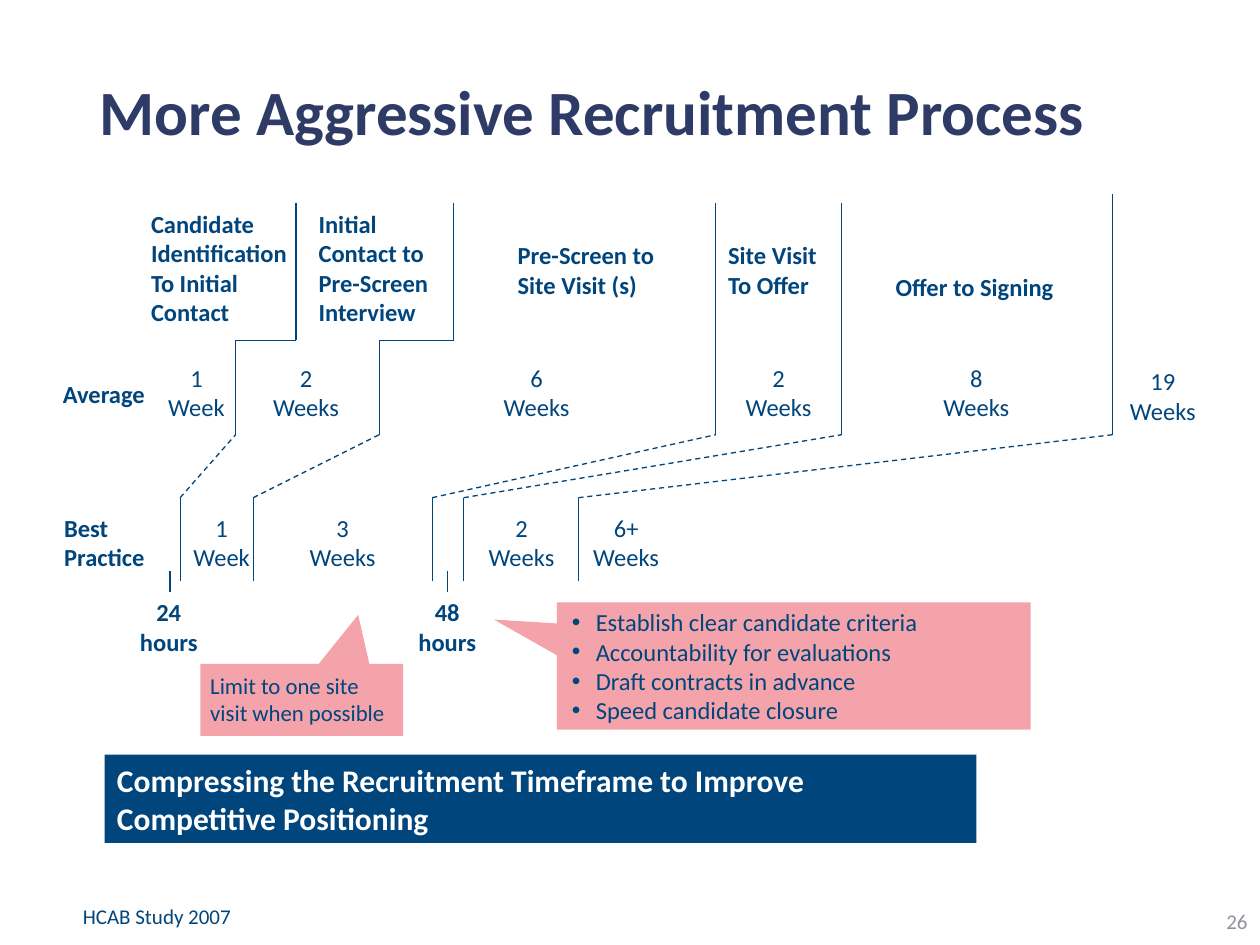
from dataclasses import dataclass

from lxml.etree import SubElement
from pptx import Presentation
from pptx.dml.color import RGBColor as RGB
from pptx.enum.dml import MSO_LINE
from pptx.enum.shapes import MSO_CONNECTOR, MSO_SHAPE
from pptx.enum.text import MSO_ANCHOR, MSO_AUTO_SIZE, PP_ALIGN
from pptx.oxml.ns import qn
from pptx.util import Inches, Pt


@dataclass(frozen=True)
class Theme:
    font: str = "Calibri"
    blue: RGB = RGB(0x00, 0x45, 0x7C)
    navy: RGB = RGB(0x2E, 0x3B, 0x66)
    pink: RGB = RGB(0xF3, 0xA3, 0xA9)
    gray: RGB = RGB(0x8F, 0x92, 0xA0)
    white: RGB = RGB(0xFF, 0xFF, 0xFF)
    title: int = 36
    banner: int = 18
    body: int = 14
    note: int = 13
    small: int = 12


theme = Theme()
prs = Presentation()
prs.slide_width, prs.slide_height = Inches(10), Inches(7.5)
s = prs.slides.add_slide(prs.slide_layouts[5])


def write(sp, lines, size=theme.body, color=theme.blue, bold=False,
          align=PP_ALIGN.LEFT, anchor=MSO_ANCHOR.TOP, wrap=True, bullet=False):
    """Fill a shape with one paragraph per line."""
    tf = sp.text_frame
    tf.word_wrap = wrap
    tf.auto_size = MSO_AUTO_SIZE.NONE
    tf.vertical_anchor = anchor
    for i, line in enumerate(lines):
        p = tf.add_paragraph() if i else tf.paragraphs[0]
        p.alignment = align
        if bullet:
            pPr = p._p.get_or_add_pPr()
            pPr.set("marL", str(Inches(0.19)))
            pPr.set("indent", str(Inches(-0.19)))
            SubElement(pPr, qn("a:buFont"), typeface="Arial")
            SubElement(pPr, qn("a:buChar"), char="•")
        r = p.add_run()
        r.text = line
        r.font.name, r.font.size, r.font.bold = theme.font, Pt(size), bold
        r.font.color.rgb = color


def add_box(x, y, w, h, shape=None, fill=None):
    """Add a text box, or a filled borderless shape if one is named."""
    place = [Inches(v) for v in (x, y, w, h)]
    if shape is None:
        return s.shapes.add_textbox(*place)
    sp = s.shapes.add_shape(shape, *place)
    sp.shadow.inherit = False
    sp.fill.solid()
    sp.fill.fore_color.rgb = fill
    sp.line.fill.background()
    return sp


# Title
title = s.shapes.title
title.left, title.top = Inches(0.69), Inches(0.19)
title.width, title.height = Inches(8.62), Inches(1.45)
write(title, ["More Aggressive Recruitment Process"], theme.title, theme.navy,
      bold=True, anchor=MSO_ANCHOR.MIDDLE)
title.text_frame.paragraphs[0].line_spacing = 0.9

# Dividers: heading row, average row, best-practice row and the links between
top, step, avg_end, best_top, best_end = 1.61, 2.7, 3.45, 3.95, 4.61
solid, dashed = [], []
for head_x, avg_x, best_x in [(2.35, 1.87, 1.43), (3.6, 3.01, 2.01)]:
    solid += [(head_x, top, head_x, step), (head_x, step, avg_x, step),
              (avg_x, step, avg_x, avg_end)]
    dashed.append((best_x, best_top, avg_x, avg_end))
    solid.append((best_x, best_top, best_x, best_end))
for avg_x, best_x, start in [(5.68, 3.43, top), (6.68, 3.68, top), (8.83, 4.59, 1.54)]:
    solid += [(avg_x, start, avg_x, avg_end), (best_x, best_top, best_x, best_end)]
    dashed.append((best_x, best_top, avg_x, avg_end))
for tick_x in (1.35, 3.55):
    solid.append((tick_x, 4.53, tick_x, 4.7))

for lines, dash in ((solid, None), (dashed, MSO_LINE.DASH)):
    for ends in lines:
        line = s.shapes.add_connector(MSO_CONNECTOR.STRAIGHT, *[Inches(v) for v in ends])
        line.line.color.rgb = theme.blue
        line.line.width = Pt(0.75)
        if dash:
            line.line.dash_style = dash
        SubElement(line._element.spPr, qn("a:effectLst"))

# Phase headings and row labels
for x, y, w, h, lines in [
    (1.1, 1.61, 1.29, 1.04, ["Candidate", "Identification", "To Initial", "Contact"]),
    (2.43, 1.61, 1.08, 1.04, ["Initial", "Contact to", "Pre-Screen", "Interview"]),
    (4.01, 1.86, 1.29, 0.57, ["Pre-Screen to", "Site Visit (s)"]),
    (5.68, 1.86, 0.91, 0.57, ["Site Visit", "To Offer"]),
    (7.01, 2.11, 1.46, 0.33, ["Offer to Signing"]),
    (0.4, 2.96, 0.86, 0.33, ["Average"]),
    (0.41, 4.02, 0.85, 0.57, ["Best", "Practice"]),
]:
    write(add_box(x, y, w, h), lines, bold=True, wrap=False)

# Durations, each centred on x
for x, y, number, unit in [
    (1.56, 2.83, "1", "Week"), (2.43, 2.83, "2", "Weeks"), (4.26, 2.83, "6", "Weeks"),
    (6.18, 2.83, "2", "Weeks"), (7.75, 2.83, "8", "Weeks"), (9.23, 2.86, "19", "Weeks"),
    (1.76, 4.02, "1", "Week"), (2.72, 4.02, "3", "Weeks"), (4.14, 4.02, "2", "Weeks"),
    (4.97, 4.02, "6+", "Weeks"), (1.34, 4.69, "24", "hours"), (3.55, 4.69, "48", "hours"),
]:
    w = 0.73 if unit == "Weeks" else 0.66
    write(add_box(x - w / 2, y, w, 0.57), [number, unit], bold=unit == "hours",
          align=PP_ALIGN.CENTER, wrap=False)

# Callouts
for place, tip in [((1.59, 5.27, 1.61, 0.57), (0.278, -1.185)),
                   ((4.42, 4.78, 3.76, 1.01), (-0.633, -0.364))]:
    callout = add_box(*place, MSO_SHAPE.RECTANGULAR_CALLOUT, theme.pink)
    callout.adjustments[0], callout.adjustments[1] = tip
write(add_box(1.57, 5.28, 1.68, 0.53), ["Limit to one site visit when possible"], theme.note)
write(add_box(4.44, 4.77, 3.67, 1.04),
      ["Establish clear candidate criteria", "Accountability for evaluations",
       "Draft contracts in advance", "Speed candidate closure"], bullet=True)

# Banner, source and page number
write(add_box(0.83, 5.99, 6.92, 0.7, MSO_SHAPE.RECTANGLE, theme.blue),
      ["Compressing the Recruitment Timeframe to Improve Competitive Positioning"],
      theme.banner, theme.white, bold=True)
write(add_box(0.56, 7.12, 1.97, 0.3), ["HCAB Study 2007"], theme.small)
write(add_box(7.75, 7.11, 2.25, 0.4), ["26"], theme.small, theme.gray,
      align=PP_ALIGN.RIGHT, anchor=MSO_ANCHOR.MIDDLE)

prs.save("out.pptx")
